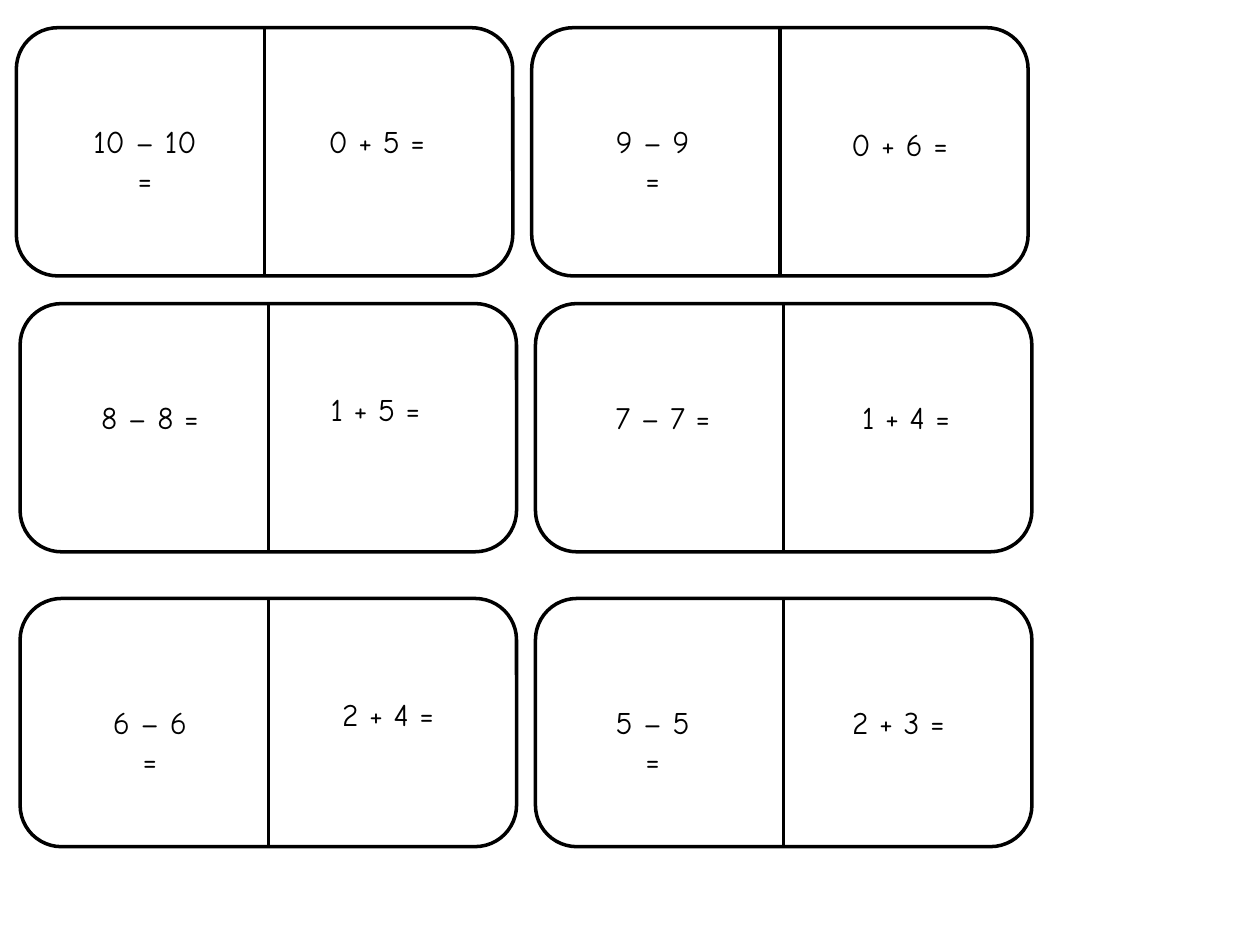
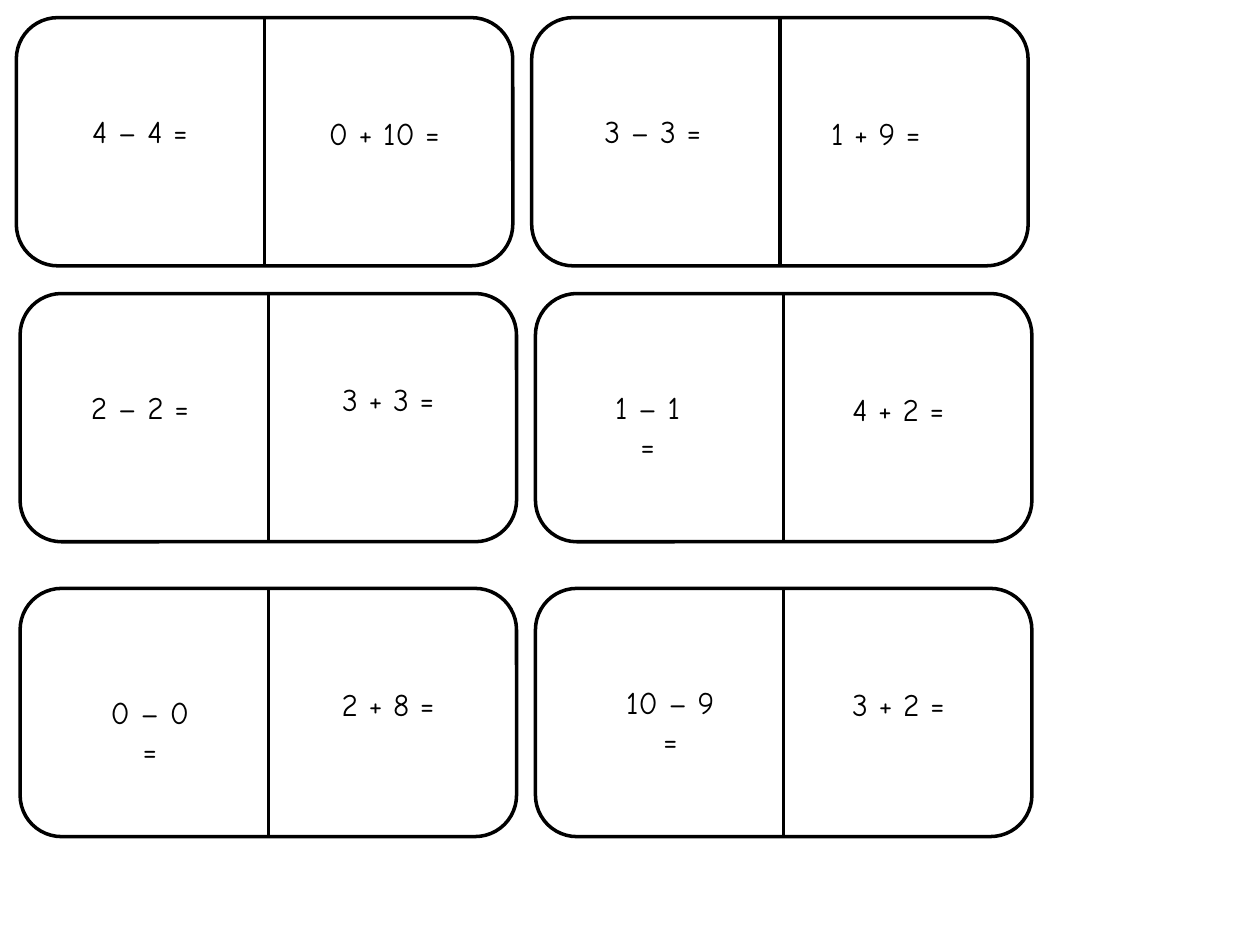
from lxml import etree
from pptx import Presentation
from pptx.dml.color import RGBColor
from pptx.enum.shapes import MSO_CONNECTOR, MSO_SHAPE
from pptx.enum.text import MSO_AUTO_SIZE, PP_ALIGN
from pptx.oxml.ns import qn
from pptx.util import Inches, Pt

COLORS = {"ink": "000000", "paper": "FFFFFF"}
FONT = "Comic Neue"
DOMINO_W, DOMINO_H = 3.94, 1.97
COLUMN_PITCH = 4.09
ROW_LEFTS = [0.13, 0.16, 0.16]
ROW_OFFSETS = [0, 2.19, 4.53]
TWO_LINE_SUMS = {"10 – 10 =", "9 – 9 =", "6 – 6 =", "5 – 5 =",
                 "1 – 1 =", "0 – 0 =", "10 – 9 ="}

# Each sum: text, centre from the domino's left, top from the domino's top
SHEETS = [
    (0.22, [
        (("10 – 10 =", 1.02, 0.70), ("0 + 5 =", 2.86, 0.70)),
        (("9 – 9 =", 0.96, 0.70), ("0 + 6 =", 2.92, 0.72)),
        (("8 – 8 =", 1.03, 0.70), ("1 + 5 =", 2.82, 0.64)),
        (("7 – 7 =", 1.01, 0.70), ("1 + 4 =", 2.94, 0.70)),
        (("6 – 6 =", 1.03, 0.78), ("2 + 4 =", 2.92, 0.72)),
        (("5 – 5 =", 0.93, 0.78), ("2 + 3 =", 2.88, 0.78)),
    ]),
    (0.14, [
        (("4 – 4 =", 0.98, 0.70), ("0 + 10 =", 2.92, 0.72)),
        (("3 – 3 =", 0.96, 0.70), ("1 + 9 =", 2.73, 0.72)),
        (("2 – 2 =", 0.95, 0.70), ("3 + 3 =", 2.92, 0.64)),
        (("1 – 1 =", 0.89, 0.70), ("4 + 2 =", 2.88, 0.72)),
        (("0 – 0 =", 1.03, 0.78), ("2 + 8 =", 2.92, 0.72)),
        (("10 – 9 =", 1.07, 0.70), ("3 + 2 =", 2.88, 0.72)),
    ]),
]


def rgb(name):
    return RGBColor.from_string(COLORS[name])


def style_line(line):
    line.color.rgb = rgb("ink")
    line.width = Pt(2)


def add_domino(slide, left, top):
    shapes = slide.shapes.add_group_shape().shapes
    sp = shapes.add_shape(MSO_SHAPE.ROUNDED_RECTANGLE, Inches(left), Inches(top),
                          Inches(DOMINO_W), Inches(DOMINO_H))
    sp.shadow.inherit = False
    sp.fill.background()
    style_line(sp.line)

    middle = Inches(left + DOMINO_W / 2)
    divider = shapes.add_connector(MSO_CONNECTOR.STRAIGHT, middle, Inches(top),
                                   middle, Inches(top + DOMINO_H))
    divider.begin_connect(sp, 0)
    divider.end_connect(sp, 2)
    style_line(divider.line)
    etree.SubElement(divider._element.spPr, qn("a:effectLst"))


def add_sum(slide, text, center, top):
    two_lines = text in TWO_LINE_SUMS
    width = 0.21 + 0.11 * len(text) - (0.12 if two_lines else 0)
    box = slide.shapes.add_textbox(Inches(center - width / 2), Inches(top),
                                   Inches(width), Inches(0.4))
    tf = box.text_frame
    tf.word_wrap = two_lines
    tf.auto_size = MSO_AUTO_SIZE.SHAPE_TO_FIT_TEXT
    p = tf.paragraphs[0]
    p.text = text
    p.alignment = PP_ALIGN.CENTER
    p.font.name = FONT
    p.font.size = Pt(18)
    p.font.color.rgb = rgb("ink")


def add_sheet(prs, first_top, dominoes):
    slide = prs.slides.add_slide(prs.slide_layouts[6])
    slide.background.fill.solid()
    slide.background.fill.fore_color.rgb = rgb("paper")
    for i, sums in enumerate(dominoes):
        row, column = divmod(i, 2)
        left = ROW_LEFTS[row] + column * COLUMN_PITCH
        top = first_top + ROW_OFFSETS[row]
        add_domino(slide, left, top)
        for text, dx, dy in sums:
            add_sum(slide, text, left + dx, top + dy)


def main():
    prs = Presentation()
    prs.slide_width = Inches(10)
    prs.slide_height = Inches(7.5)
    for first_top, dominoes in SHEETS:
        add_sheet(prs, first_top, dominoes)
    prs.save("out.pptx")


if __name__ == "__main__":
    main()
